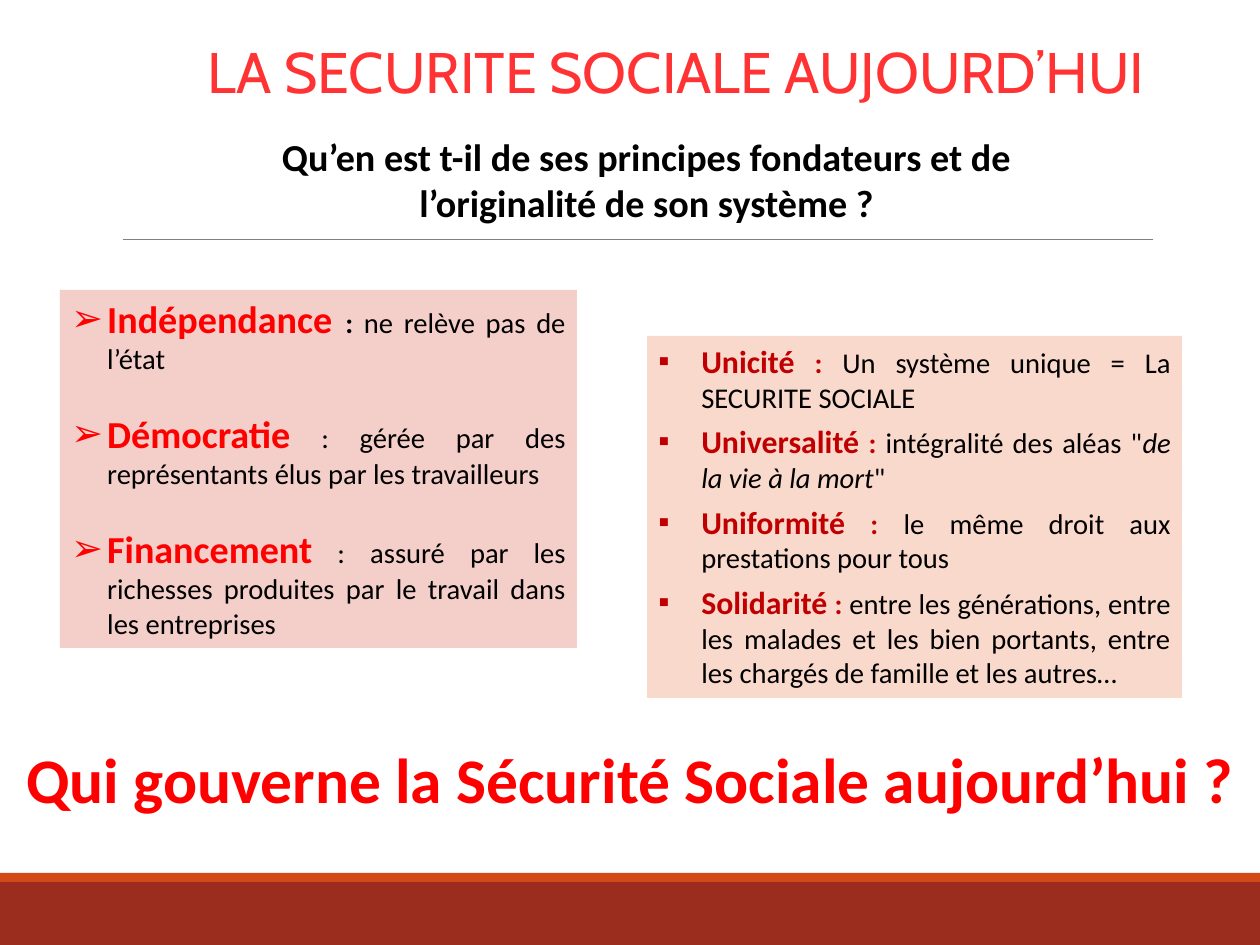
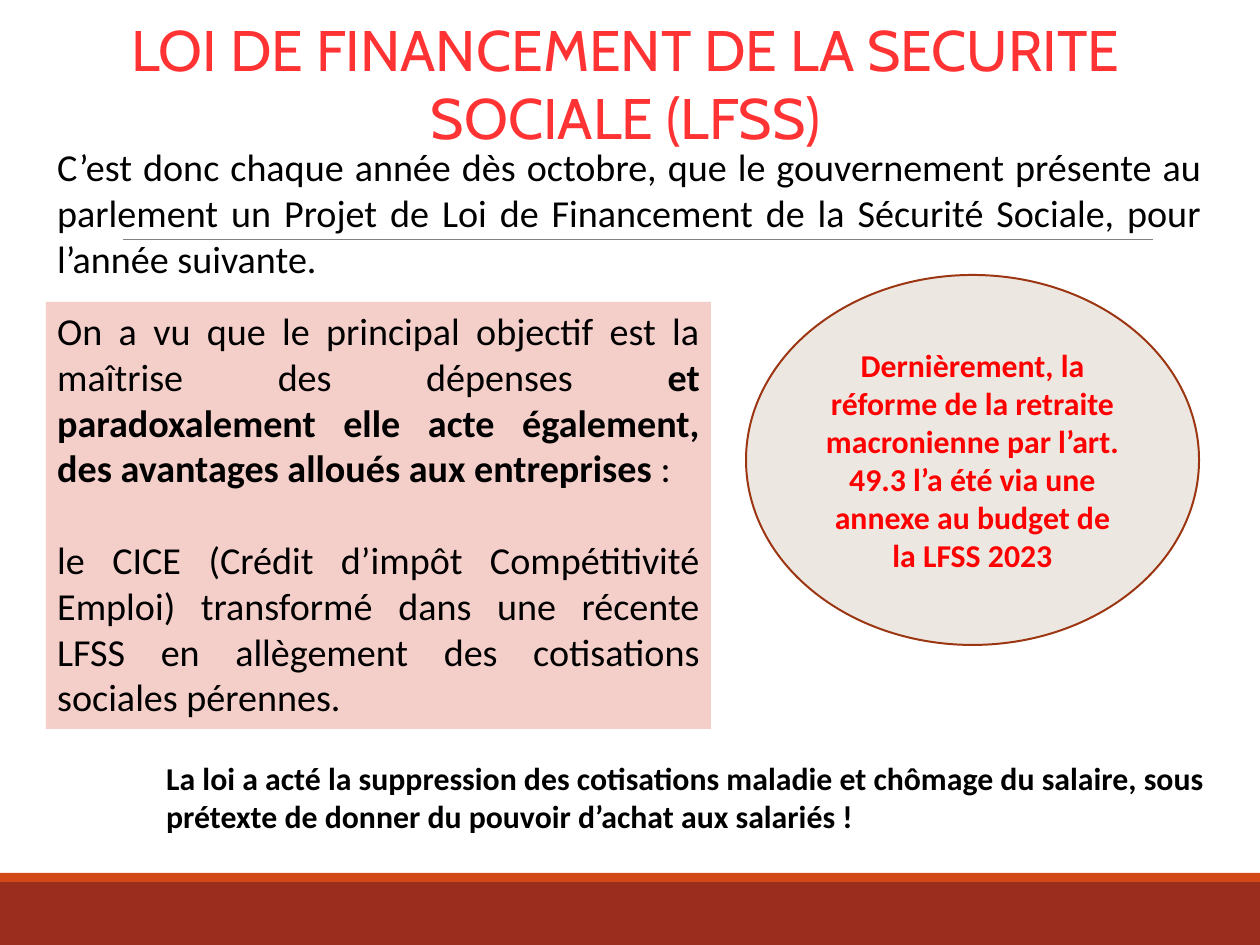
from dataclasses import dataclass
from lxml.etree import SubElement
from pptx import Presentation
from pptx.dml.color import RGBColor
from pptx.enum.shapes import MSO_CONNECTOR, MSO_SHAPE
from pptx.enum.text import MSO_ANCHOR, PP_ALIGN
from pptx.oxml.ns import qn
from pptx.util import Emu, Pt


@dataclass(frozen=True)
class Theme:
    title: str = "FF3333"
    black: str = "000000"
    red: str = "FF0000"
    dark: str = "C00000"
    pink: str = "F4CEC9"
    peach: str = "FAD9CD"
    sand: str = "ECE8E1"
    edge: str = "9C3511"
    band: str = "9B2D1F"
    stripe: str = "D34817"
    rule: str = "808080"
    head: str = "Cabin"
    body: str = "Calibri"
    huge: int = 40
    top: int = 36
    large: int = 24
    mid: int = 20
    small: int = 18


T = Theme()
PX = 8000
WIDE, HIGH = 1260, 945
MID, JUST = PP_ALIGN.CENTER, PP_ALIGN.JUSTIFY


def block(slide, at, fill=None, kind=MSO_SHAPE.RECTANGLE, anchor=MSO_ANCHOR.TOP):
    """Add a text box, or a preset shape when a fill is given."""
    box = [Emu(n * PX) for n in at]
    if fill:
        shape = slide.shapes.add_shape(kind, *box)
        shape.shadow.inherit = False
        shape.fill.solid()
        shape.fill.fore_color.rgb = RGBColor.from_string(fill)
        shape.line.fill.background()
    else:
        shape = slide.shapes.add_textbox(*box)
    shape.text_frame.word_wrap = True
    shape.text_frame.vertical_anchor = anchor
    return shape


def write(shape, paras, align, gap=0, font=T.body, mark=None, hang=0):
    """Fill a shape; each run is (text, size, colour, styles), styles using b and i."""
    frame = shape.text_frame
    for n, runs in enumerate(paras):
        para = frame.add_paragraph() if n else frame.paragraphs[0]
        para.alignment = align
        para.space_before = Pt(gap if n else 0)
        for text, size, colour, style in runs:
            run = para.add_run()
            run.text = text
            run.font.name = font
            run.font.size = Pt(size)
            run.font.bold = "b" in style
            run.font.italic = "i" in style
            run.font.color.rgb = RGBColor.from_string(colour)
        if mark:
            props = para._p.get_or_add_pPr()
            props.set("marL", str(hang * PX))
            props.set("indent", str(-hang * PX))
            tint = SubElement(props, qn("a:buClr"))
            SubElement(tint, qn("a:srgbClr"), val=runs[0][2])
            SubElement(props, qn("a:buFont"), typeface="Arial")
            SubElement(props, qn("a:buChar"), char=mark)


deck = Presentation()
deck.slide_width, deck.slide_height = Emu(WIDE * PX), Emu(HIGH * PX)
blank = deck.slide_layouts[6]
today, law = [deck.slides.add_slide(blank) for _ in range(2)]

# Shared bands and rule, moved to the layout
for holder in list(blank.placeholders):
    holder.element.getparent().remove(holder.element)
band = block(today, (0, 882, WIDE, 63), T.band)
stripe = block(today, (0, 873, WIDE, 9), T.stripe)
rule = today.shapes.add_connector(
    MSO_CONNECTOR.STRAIGHT, *[Emu(n * PX) for n in (123, 239, 1153, 239)])
rule.line.color.rgb = RGBColor.from_string(T.rule)
rule.line.width = Pt(0.5)
SubElement(rule.element.spPr, qn("a:effectLst"))
for part in (band, stripe, rule):
    blank.shapes.element.append(part.element)

# Titles
for slide, at, text in (
    (today, (201, 19, 950, 103), "LA SECURITE SOCIALE AUJOURD’HUI"),
    (law, (91, 27, 1069, 111), "LOI DE FINANCEMENT DE LA SECURITE SOCIALE (LFSS)"),
):
    title = block(slide, at, anchor=MSO_ANCHOR.MIDDLE)
    frame = title.text_frame
    frame.margin_left = frame.margin_right = frame.margin_top = frame.margin_bottom = 0
    write(title, [[(text, T.top, T.title, "")]], MID, font=T.head)

# Plain texts
for slide, at, text, size, colour, style, align in (
    (today, (207, 128, 879, 104),
     "Qu’en est t-il de ses principes fondateurs et de l’originalité de son système ?",
     T.large, T.black, "b", MID),
    (today, (1, 734, 1258, 88), "Qui gouverne la Sécurité Sociale aujourd’hui ?",
     T.huge, T.red, "b", MID),
    (law, (46, 138, 1167, 150),
     "C’est donc chaque année dès octobre, que le gouvernement présente au parlement "
     "un Projet de Loi de Financement de la Sécurité Sociale, pour l’année suivante.",
     T.large, T.black, "", JUST),
    (law, (155, 753, 1078, 88),
     "La loi a acté la suppression des cotisations maladie et chômage du salaire, sous "
     "prétexte de donner du pouvoir d’achat aux salariés !",
     T.mid, T.black, "b", PP_ALIGN.LEFT),
):
    write(block(slide, at), [[(text, size, colour, style)]], align)

# Founding principles
basis = [
    [("Indépendance ", T.large, T.red, "b"), (":", T.small, T.black, "b"),
     (" ne relève pas de l’état", T.small, T.black, "")],
    [("Démocratie", T.large, T.red, "b"),
     (" : gérée par des représentants élus par les travailleurs", T.small, T.black, "")],
    [("Financement", T.large, T.red, "b"),
     (" : assuré par les richesses produites par le travail dans les entreprises",
      T.small, T.black, "")],
]
write(block(today, (60, 290, 517, 358), T.pink), basis, JUST,
      gap=22, mark="➢", hang=36)

# Original features of the system
traits = [
    ("Unicité", [("Un système unique = La SECURITE SOCIALE", "")]),
    ("Universalité", [("intégralité des aléas \"", ""), ("de la vie à la mort", "i"),
                      ("\"", "")]),
    ("Uniformité", [("le même droit aux prestations pour tous", "")]),
    ("Solidarité", [("entre les générations, entre les malades et les bien portants, "
                     "entre les chargés de famille et les autres…", "")]),
]
lines = [
    [(name, T.mid, T.dark, "b"), (" : ", T.small, T.dark, "b")]
    + [(text, T.small, T.black, style) for text, style in rest]
    for name, rest in traits
]
write(block(today, (647, 336, 535, 362), T.peach), lines, JUST,
      gap=5, mark="▪", hang=43)

# Aim of the law
aim = [
    [("On a vu que le principal objectif est la maîtrise des dépenses ",
      T.large, T.black, ""),
     ("et paradoxalement elle acte également, des avantages alloués aux entreprises",
      T.large, T.black, "b"),
     (" :", T.large, T.black, "")],
    [("le CICE (Crédit d’impôt Compétitivité Emploi) transformé dans une récente LFSS "
      "en allègement des cotisations sociales pérennes.", T.large, T.black, "")],
]
write(block(law, (46, 302, 665, 427), T.pink), aim, JUST, gap=29)

# Pension reform
reform = block(law, (746, 275, 453, 370), T.sand, MSO_SHAPE.OVAL, MSO_ANCHOR.MIDDLE)
reform.line.color.rgb = RGBColor.from_string(T.edge)
reform.line.width = Pt(1.25)
write(reform, [[("Dernièrement, la réforme de la retraite macronienne par l’art. 49.3 "
                 "l’a été via une annexe au budget de la LFSS 2023",
                 T.mid, T.red, "b")]], MID)

deck.save("out.pptx")
